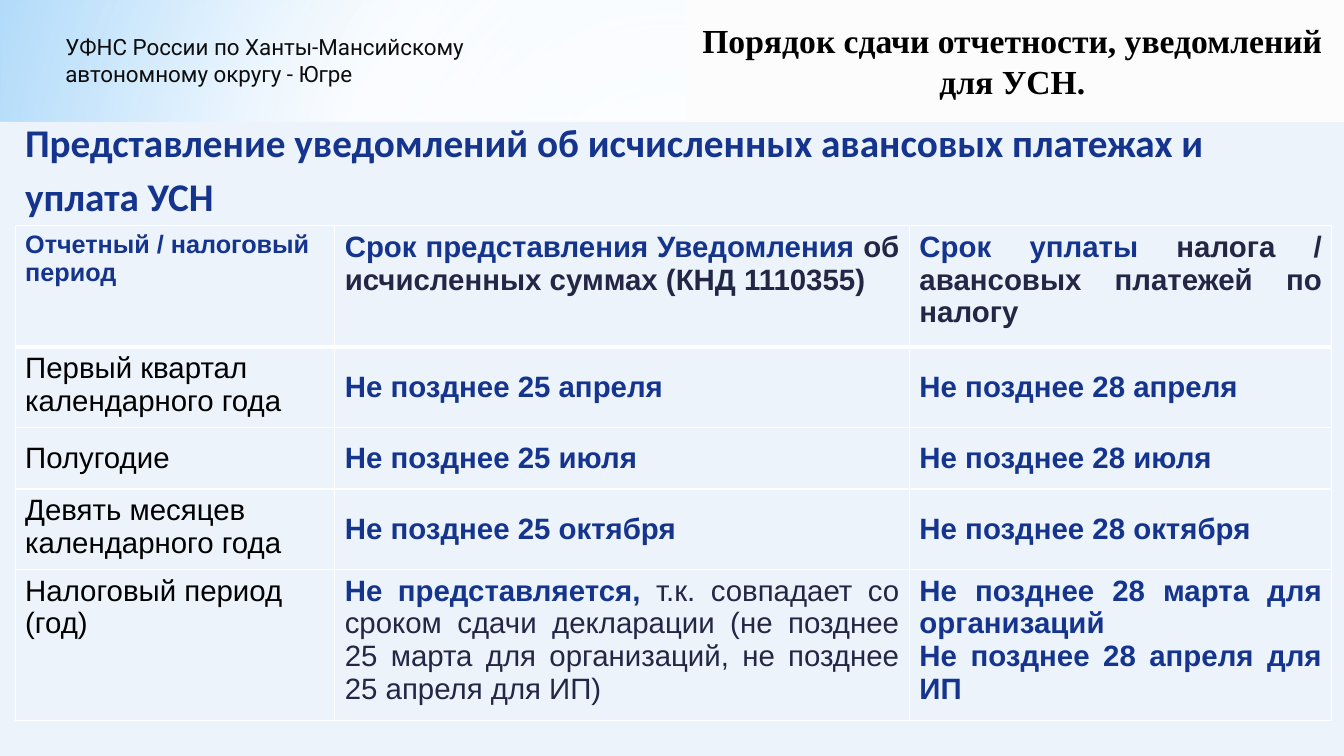
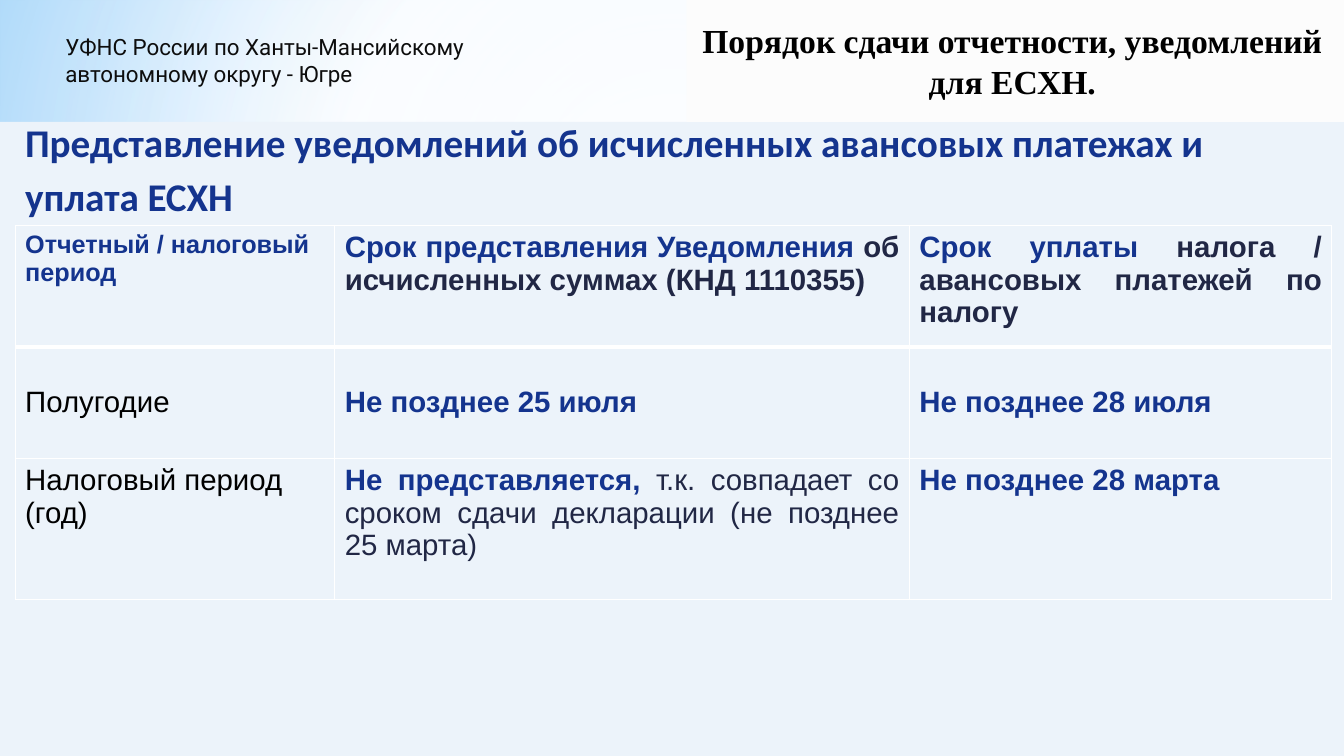
import pptx
import pptx.dml.color
import pptx.enum.shapes
import pptx.enum.text
import pptx.oxml
import pptx.oxml.ns
import pptx.util

Inches = pptx.util.Inches
Pt = pptx.util.Pt
RGBColor = pptx.dml.color.RGBColor
Align = pptx.enum.text.PP_ALIGN
Anchor = pptx.enum.text.MSO_ANCHOR

BLACK = RGBColor(0x00, 0x00, 0x00)
AGENCY_INK = RGBColor(0x0D, 0x0D, 0x0D)
BLUE = RGBColor(0x14, 0x34, 0x8E)
NAVY = RGBColor(0x21, 0x27, 0x45)
SKY = RGBColor(0xB4, 0xDC, 0xFA)
BRIGHT_SKY = RGBColor(0x9E, 0xD5, 0xFF)
DEEP_SKY = RGBColor(0x5B, 0xB9, 0xFF)
WHITE = RGBColor(0xFF, 0xFF, 0xFF)
NEAR_WHITE = RGBColor(0xFC, 0xFC, 0xFC)
PAGE = RGBColor(0xEC, 0xF3, 0xFA)

WIDTH, HEIGHT = 13.33, 7.5
BAND_HEIGHT = 1.21
BAND_SPLIT = 6.81
COLUMN_WIDTHS = [3.17, 5.7, 4.19]
HEADER_SIZE, BODY_SIZE = 18, 21

# Gradient stops: (position %, colour, opacity %); focus: left, top, right, bottom %.
SKY_STOPS = [(0, BRIGHT_SKY, 100), (60, WHITE, 100), (100, DEEP_SKY, 100)]
SKY_FOCUS = (20, 10, 20, 60)
HAZE_STOPS = [(0, WHITE, 89), (48, WHITE, 62), (100, SKY, 79)]
HAZE_FOCUS = (50, 50, 50, 50)
HAZE_HEIGHTS = [5.58, 4.23]

AGENCY = "УФНС России по Ханты-Мансийскому автономному округу - Югре"

# A cell is a list of paragraphs; a paragraph is a list of (text, colour, bold).
HEADINGS = [
    [[("Отчетный / налоговый период", BLUE, True)]],
    [[("Срок представления Уведомления ", BLUE, True),
      ("об исчисленных суммах (КНД 1110355)", NAVY, True)]],
    [[("Срок уплаты", BLUE, True),
      (" налога / авансовых платежей по налогу", NAVY, True)]],
]


def period_row(period, month):
    return [[[(period, BLACK, False)]]] + [
        [[(f"Не позднее {day} {month}", BLUE, True)]] for day in (25, 28)]


def year_row(declaration_dates, payments):
    reason = f"т.к. совпадает со сроком сдачи декларации ({declaration_dates})"
    return [
        [[("Налоговый период (год)", BLACK, False)]],
        [[("Не представляется, ", BLUE, True), (reason, NAVY, False)]],
        [[(payment, BLUE, True)] for payment in payments],
    ]


REGIMES = [
    ("УСН", [1.2, 0.75, 0.61, 0.75, 1.4], [
        HEADINGS,
        period_row("Первый квартал календарного года", "апреля"),
        period_row("Полугодие", "июля"),
        period_row("Девять месяцев календарного года", "октября"),
        year_row("не позднее 25 марта для организаций, не позднее 25 апреля для ИП",
                 ["Не позднее 28 марта для организаций",
                  "Не позднее 28 апреля для ИП"]),
    ]),
    ("ЕСХН", [1.2, 1.11, 1.4], [
        HEADINGS,
        period_row("Полугодие", "июля"),
        year_row("не позднее 25 марта", ["Не позднее 28 марта"]),
    ]),
]


def set_font(font, name, size, color, bold):
    font.name = name
    font.size = Pt(size)
    font.color.rgb = color
    font.bold = bold


def set_circle_gradient(fill, owner, stops, focus):
    """Give fill, which belongs to the XML element owner, a circular gradient."""
    fill.gradient()
    default = owner.find(".//" + pptx.oxml.ns.qn("a:gradFill"))
    stop_list = "".join(
        f'<a:gs pos="{position * 1000}"><a:srgbClr val="{color}">'
        f'<a:alpha val="{opacity * 1000}"/></a:srgbClr></a:gs>'
        for position, color, opacity in stops)
    sides = " ".join(f'{side}="{share * 1000}"' for side, share in zip("ltrb", focus))
    default.getparent().replace(default, pptx.oxml.parse_xml(
        f'<a:gradFill {pptx.oxml.ns.nsdecls("a")} rotWithShape="1">'
        f'<a:gsLst>{stop_list}</a:gsLst>'
        f'<a:path path="circle"><a:fillToRect {sides}/></a:path></a:gradFill>'))


def add_text(slide, box, text, name, size, color, bold):
    """Place a wrapping one-paragraph text box and return its paragraph."""
    frame = slide.shapes.add_textbox(*map(Inches, box)).text_frame
    frame.word_wrap = True
    paragraph = frame.paragraphs[0]
    paragraph.text = text
    set_font(paragraph.font, name, size, color, bold)
    return paragraph


def add_panel(slide, box, color=None):
    panel = slide.shapes.add_shape(
        pptx.enum.shapes.MSO_SHAPE.RECTANGLE, *map(Inches, box))
    panel.shadow.inherit = False
    panel.line.fill.background()
    if color is not None:
        panel.fill.solid()
        panel.fill.fore_color.rgb = color
    return panel


def add_backdrop(slide):
    """Paint the hazy sky, then the page and topic panels over it."""
    set_circle_gradient(slide.background.fill, slide.element, SKY_STOPS, SKY_FOCUS)
    for height in HAZE_HEIGHTS:
        haze = add_panel(slide, (0, 0, WIDTH, height))
        set_circle_gradient(haze.fill, haze.element, HAZE_STOPS, HAZE_FOCUS)
    add_panel(slide, (0, BAND_HEIGHT, WIDTH, HEIGHT - BAND_HEIGHT), PAGE)
    add_panel(slide, (BAND_SPLIT, 0, WIDTH - BAND_SPLIT, BAND_HEIGHT), NEAR_WHITE)


def add_header(slide, regime):
    add_text(slide, (0.55, 0.28, 4.8, 0.64), AGENCY,
             "Roboto", 16, AGENCY_INK, False)
    topic = add_text(slide, (6.75, 0.15, 6.58, 0.91),
                     f"Порядок сдачи отчетности, уведомлений для {regime}.",
                     "Times New Roman", 24, BLACK, True)
    topic.alignment = Align.CENTER


def add_title(slide, box, regime):
    title = add_text(
        slide, box,
        f"Представление уведомлений об исчисленных авансовых платежах и уплата {regime}",
        "Calibri", 28, BLUE, True)
    title.line_spacing = 1.15
    title.space_after = Pt(10)


def set_borders(cell, top, bottom):
    """Draw white cell borders; top and bottom widths are in points."""
    properties = cell._tc.get_or_add_tcPr()
    for side, width in (("L", 1), ("R", 1), ("T", top), ("B", bottom)):
        properties.append(pptx.oxml.parse_xml(
            f'<a:ln{side} {pptx.oxml.ns.nsdecls("a")} w="{Pt(width)}">'
            f'<a:solidFill><a:srgbClr val="{WHITE}"/></a:solidFill>'
            f'</a:ln{side}>'))


def fill_cell(cell, paragraphs, size, alignment):
    frame = cell.text_frame
    for index, runs in enumerate(paragraphs):
        paragraph = frame.add_paragraph() if index else frame.paragraphs[0]
        paragraph.alignment = alignment
        paragraph.font.name = "Arial"
        paragraph.font.size = Pt(size)
        for text, color, bold in runs:
            run = paragraph.add_run()
            run.text = text
            set_font(run.font, "Arial", size, color, bold)


def add_deadlines(slide, left, top, row_heights, rows):
    table = slide.shapes.add_table(
        len(rows), len(COLUMN_WIDTHS), Inches(left), Inches(top),
        Inches(sum(COLUMN_WIDTHS)), Inches(sum(row_heights))).table
    table.horz_banding = False
    for column, width in zip(table.columns, COLUMN_WIDTHS):
        column.width = Inches(width)
    for r, (height, row) in enumerate(zip(row_heights, rows)):
        table.rows[r].height = Inches(height)
        is_outer = r in (0, len(rows) - 1)
        for c, paragraphs in enumerate(row):
            cell = table.cell(r, c)
            set_borders(cell, 3 if r == 1 else 1, 3 if r == 0 else 1)
            cell.fill.background()
            is_long_period = c == 0 and " " in paragraphs[0][0][0]
            cell.vertical_anchor = (
                Anchor.TOP if is_outer or is_long_period else Anchor.MIDDLE)
            fill_cell(cell, paragraphs,
                      HEADER_SIZE if r == c == 0 else BODY_SIZE,
                      Align.JUSTIFY if c else Align.LEFT)


def add_regime_slide(deck, regime, row_heights, rows):
    slide = deck.slides.add_slide(deck.slide_layouts[6])
    add_backdrop(slide)
    add_header(slide, regime)
    add_title(slide, (0.15, 1.05, 13.06, 1.18), regime)
    add_deadlines(slide, 0.15, 2.24, row_heights, rows)


def main():
    deck = pptx.Presentation()
    deck.slide_width = Inches(WIDTH)
    deck.slide_height = Inches(HEIGHT)
    for regime, row_heights, rows in REGIMES:
        add_regime_slide(deck, regime, row_heights, rows)
    deck.save("out.pptx")


if __name__ == "__main__":
    main()
